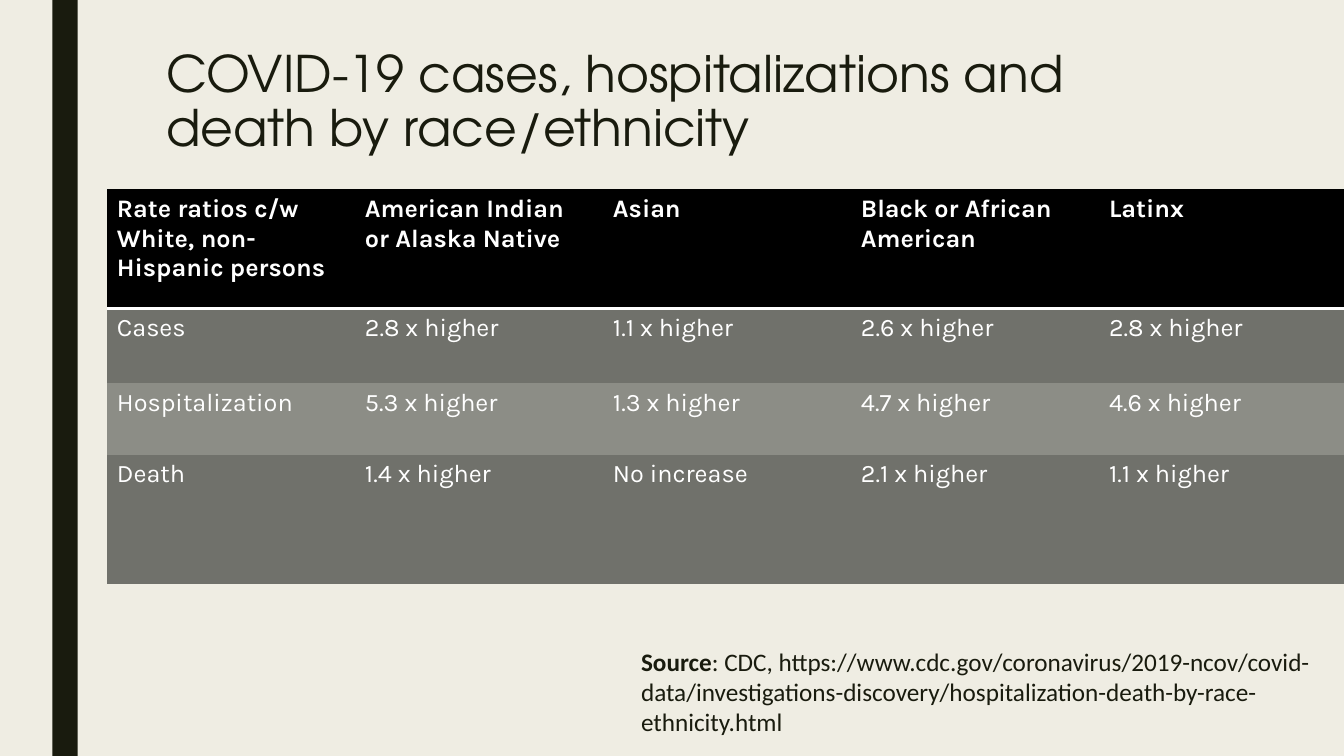
from lxml import etree
from pptx import Presentation
from pptx.dml.color import RGBColor
from pptx.enum.shapes import MSO_SHAPE
from pptx.enum.text import MSO_ANCHOR
from pptx.oxml.ns import qn
from pptx.util import Pt

RECTANGLE = MSO_SHAPE.RECTANGLE
TOP = MSO_ANCHOR.TOP
SCALE = 9144
PLAIN_TABLE_STYLE = "{2D5ABB26-0587-4C30-8999-92F81FD0307C}"
COLORS = {
    "background": "EFEDE3",
    "ink": "191B0E",
    "header": "000000",
    "dark_row": "70716B",
    "light_row": "8C8D86",
    "white": "FFFFFF",
}
ROWS = [
    ["Rate ratios c/w White, non-Hispanic persons", "American Indian or Alaska Native",
     "Asian", "Black or African American", "Latinx"],
    ["Cases", "2.8 x higher", "1.1 x higher", "2.6 x higher", "2.8 x higher"],
    ["Hospitalization", "5.3 x higher", "1.3 x higher", "4.7 x higher", "4.6 x higher"],
    ["Death", "1.4 x higher", "No increase", "2.1 x higher", "1.1 x higher"],
]
ROW_FILLS = ["header", "dark_row", "light_row", "dark_row"]
ROW_HEIGHTS = [118, 74, 71, 128]
COLUMN_WIDTH = 246


def px(*lengths):
    return [length * SCALE for length in lengths]


def color(name):
    return RGBColor.from_string(COLORS[name])


class SlideBuilder:
    """Draws styled elements on one slide, measured in px."""

    def __init__(self, presentation):
        self.slide = presentation.slides.add_slide(presentation.slide_layouts[6])
        fill = self.slide.background.fill
        fill.solid()
        fill.fore_color.rgb = color("background")

    def bar(self, box, fill):
        shape = self.slide.shapes.add_shape(RECTANGLE, *px(*box))
        shape.shadow.inherit = False
        shape.fill.solid()
        shape.fill.fore_color.rgb = color(fill)
        shape.line.fill.background()

    def run(self, paragraph, text, font, size, ink, bold=False):
        run = paragraph.add_run()
        run.text = text
        run.font.name = font
        run.font.size = Pt(size)
        run.font.bold = bold
        run.font.color.rgb = color(ink)

    def text(self, box, runs, font, size, line_spacing=1.0):
        frame = self.slide.shapes.add_textbox(*px(*box)).text_frame
        frame.word_wrap = True
        frame.vertical_anchor = TOP
        paragraph = frame.paragraphs[0]
        paragraph.line_spacing = line_spacing
        for text, bold in runs:
            self.run(paragraph, text, font, size, "ink", bold)

    def bottom_border(self, cell, ink, width):
        properties = cell._tc.get_or_add_tcPr()
        line = etree.Element(qn("a:lnB"), w=str(Pt(width)))
        fill = etree.SubElement(line, qn("a:solidFill"))
        etree.SubElement(fill, qn("a:srgbClr"), val=COLORS[ink])
        properties.insert(0, line)

    def table(self, left, top, rows, fills, heights, column_width):
        columns = len(rows[0])
        box = px(left, top, column_width * columns, sum(heights))
        frame = self.slide.shapes.add_table(len(rows), columns, *box)
        table = frame.table
        table.horz_banding = False
        next(frame.element.iter(qn("a:tableStyleId"))).text = PLAIN_TABLE_STYLE
        for column in table.columns:
            column.width = column_width * SCALE
        for row_index, (texts, fill, height) in enumerate(zip(rows, fills, heights)):
            is_header = row_index == 0
            table.rows[row_index].height = height * SCALE
            for column_index, text in enumerate(texts):
                cell = table.cell(row_index, column_index)
                cell.fill.solid()
                cell.fill.fore_color.rgb = color(fill)
                paragraph = cell.text_frame.paragraphs[0]
                self.run(paragraph, text, "Karla", 18, "white", is_header)
                if is_header:
                    self.bottom_border(cell, "white", 2)


def main():
    presentation = Presentation()
    presentation.slide_width, presentation.slide_height = px(1333, 750)
    builder = SlideBuilder(presentation)
    builder.bar((52, 0, 25, 750), "ink")
    builder.text((155, 44, 1050, 162),
                 [("COVID-19 cases, hospitalizations and death by race/ethnicity", False)],
                 "TeX Gyre Adventor", 36, 0.89)
    builder.table(106, 188, ROWS, ROW_FILLS, ROW_HEIGHTS, COLUMN_WIDTH)
    builder.text((626, 636, 731, 101),
                 [("Source", True),
                  (": CDC, https://www.cdc.gov/coronavirus/2019-ncov/covid-data/"
                   "investigations-discovery/hospitalization-death-by-race-ethnicity.html", False)],
                 "Calibri", 18)
    presentation.save("out.pptx")


if __name__ == "__main__":
    main()
